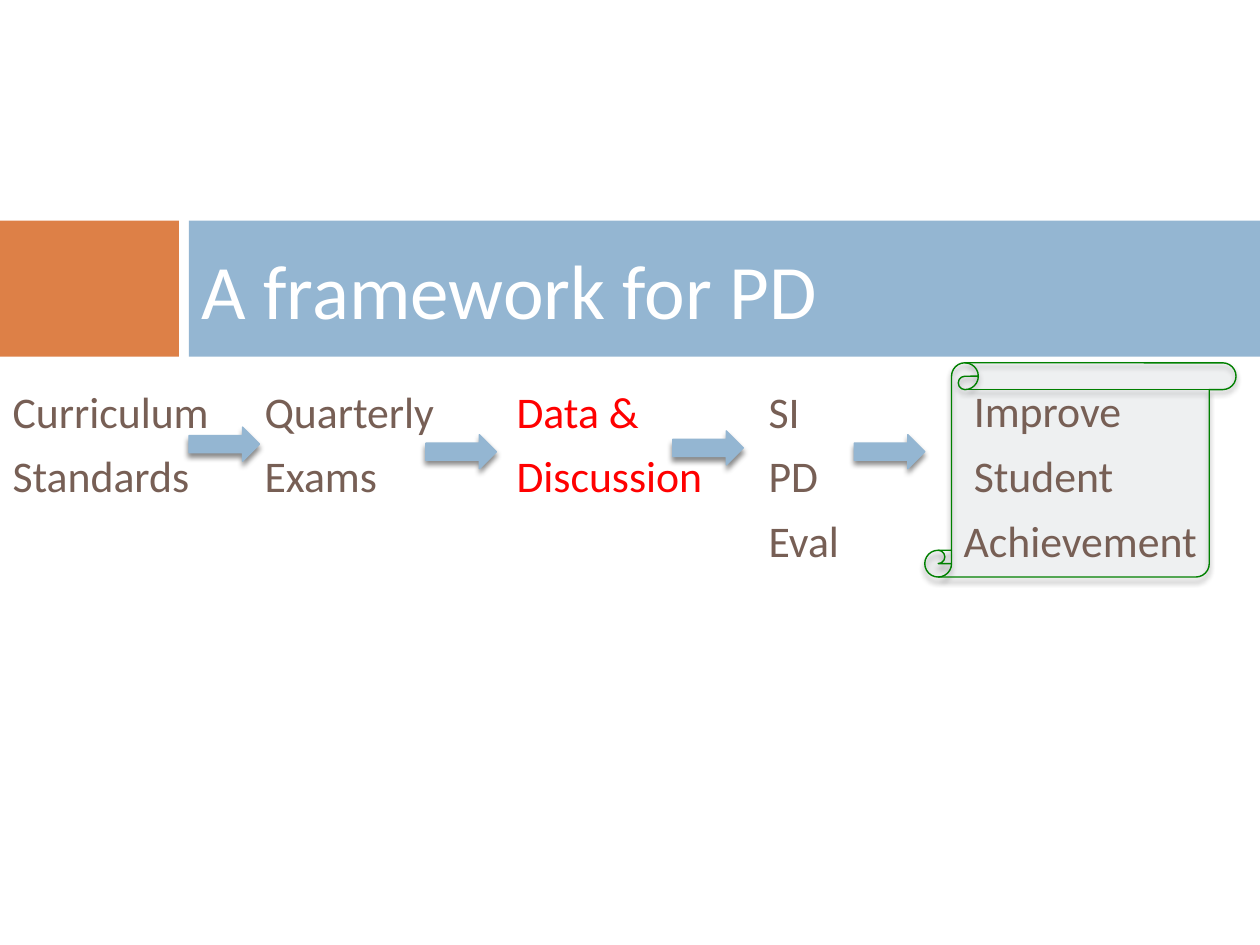
from dataclasses import dataclass

from lxml import etree
from pptx import Presentation
from pptx.dml.color import RGBColor
from pptx.enum.shapes import MSO_SHAPE
from pptx.enum.text import MSO_ANCHOR, MSO_AUTO_SIZE, PP_ALIGN
from pptx.oxml.ns import qn
from pptx.util import Inches, Pt

RECT = MSO_SHAPE.RECTANGLE
ARROW = MSO_SHAPE.RIGHT_ARROW
SCROLL = MSO_SHAPE.VERTICAL_SCROLL
LEFT = PP_ALIGN.LEFT
MIDDLE = MSO_ANCHOR.MIDDLE
TOP = MSO_ANCHOR.TOP
FIXED = MSO_AUTO_SIZE.NONE


@dataclass(frozen=True)
class Theme:
    font: str = "Calibri"
    accent: str = "DD8047"
    blue: str = "94B6D2"
    pale: str = "D4E2ED"
    green: str = "008000"
    brown: str = "775F55"
    red: str = "FF0000"
    white: str = "FFFFFF"
    black: str = "000000"
    head: float = 44
    text: float = 25
    gap: float = 7
    rule: float = 0.79
    tab: float = 2


def apply(target, values):
    for name, value in values.items():
        setattr(target, name, value)


def add_node(parent, tag, **attrs):
    values = {name: str(value) for name, value in attrs.items()}
    return etree.SubElement(parent, qn(tab_free(tag)), values)


def tab_free(tag):
    return tag.strip()


class Board:
    def __init__(self, theme, slide):
        self.theme = theme
        self.slide = slide

    def shape(self, kind, box, fill, line=None, alpha=None):
        item = self.slide.shapes.add_shape(kind, *map(Inches, box))
        item.shadow.inherit = False
        item.fill.solid()
        item.fill.fore_color.rgb = RGBColor.from_string(fill)
        if alpha is not None:
            color = item.element.spPr.find(qn("a:solidFill"))[0]
            add_node(color, "a:alpha", val=alpha * 1000)
        if line is None:
            item.line.fill.background()
        else:
            item.line.color.rgb = RGBColor.from_string(line)
            item.line.width = Pt(self.theme.rule)
            self.shade(item)
        return item

    def shade(self, item):
        effects = item.element.spPr.find(qn("a:effectLst"))
        outer = add_node(effects, "a:outerShdw", blurRad=Pt(3), dist=Pt(2.4),
                         dir=90 * 60000, rotWithShape=0)
        color = add_node(outer, "a:srgbClr", val=self.theme.black)
        add_node(color, "a:alpha", val=45000)

    def back(self, *args, **style):
        item = self.shape(*args, **style)
        self.slide.shapes.title.element.addprevious(item.element)

    def place(self, holder, box, anchor):
        names = ("left", "top", "width", "height")
        apply(holder, dict(zip(names, map(Inches, box))))
        frame = holder.text_frame
        apply(frame, {"word_wrap": True, "auto_size": FIXED,
                      "vertical_anchor": anchor})
        return frame

    def run(self, para, text, size, color):
        run = para.add_run()
        run.text = text
        apply(run.font, {"name": self.theme.font, "size": Pt(size)})
        run.font.color.rgb = RGBColor.from_string(color)

    def title(self, text, box):
        frame = self.place(self.slide.shapes.title, box, MIDDLE)
        para = frame.paragraphs[0]
        para.alignment = LEFT
        self.run(para, text, self.theme.head, self.theme.white)

    def rows(self, frame, rows):
        for index, (inset, parts) in enumerate(rows):
            para = frame.add_paragraph() if index else frame.paragraphs[0]
            apply(para, {"alignment": LEFT, "space_before": Pt(self.theme.gap)})
            props = para._p.get_or_add_pPr()
            for name, value in (("marL", inset), ("indent", 0),
                                ("defTabSz", self.theme.tab)):
                props.set(name, str(Inches(value)))
            add_node(props, "a:buNone")
            for text, color in parts:
                self.run(para, text, self.theme.text, color)

    def body(self, rows, box):
        self.rows(self.place(self.slide.placeholders[1], box, TOP), rows)

    def label(self, rows, box):
        item = self.slide.shapes.add_textbox(*map(Inches, box))
        self.rows(self.place(item, box, TOP), rows)


def main():
    theme = Theme()
    deck = Presentation()
    apply(deck, {"slide_width": Inches(10), "slide_height": Inches(7.5)})
    board = Board(theme, deck.slides.add_slide(deck.slide_layouts[1]))

    board.back(RECT, (0, 1.75, 1.42, 1.08), theme.accent)
    board.back(RECT, (1.5, 1.75, 8.5, 1.08), theme.blue)
    board.back(SCROLL, (7.34, 2.88, 2.47, 1.7), theme.pale,
               line=theme.green, alpha=11)
    board.title("A framework for PD", (1.5, 1.75, 8.33, 1.08))

    steps = (
        (0, (("Curriculum\tQuarterly\t", theme.brown), ("Data &", theme.red),
             ("\tSI", theme.brown))),
        (0, (("Standards\tExams\t", theme.brown), ("Discussion", theme.red),
             ("\tPD", theme.brown))),
        (0, (("\t\t\tEval", theme.brown),)),
    )
    board.body(steps, (0, 3, 10, 1.83))
    goal = (("Improve", 0.08), ("Student", 0.08), ("Achievement", 0))
    board.label([(inset, ((word, theme.brown),)) for word, inset in goal],
                (7.55, 3, 2.35, 1.83))

    for left, top in ((1.5, 3.39), (3.38, 3.45), (5.34, 3.42), (6.78, 3.45)):
        board.shape(ARROW, (left, top, 0.56, 0.27), theme.blue, line=theme.blue)

    deck.save("out.pptx")


if __name__ == "__main__":
    main()
